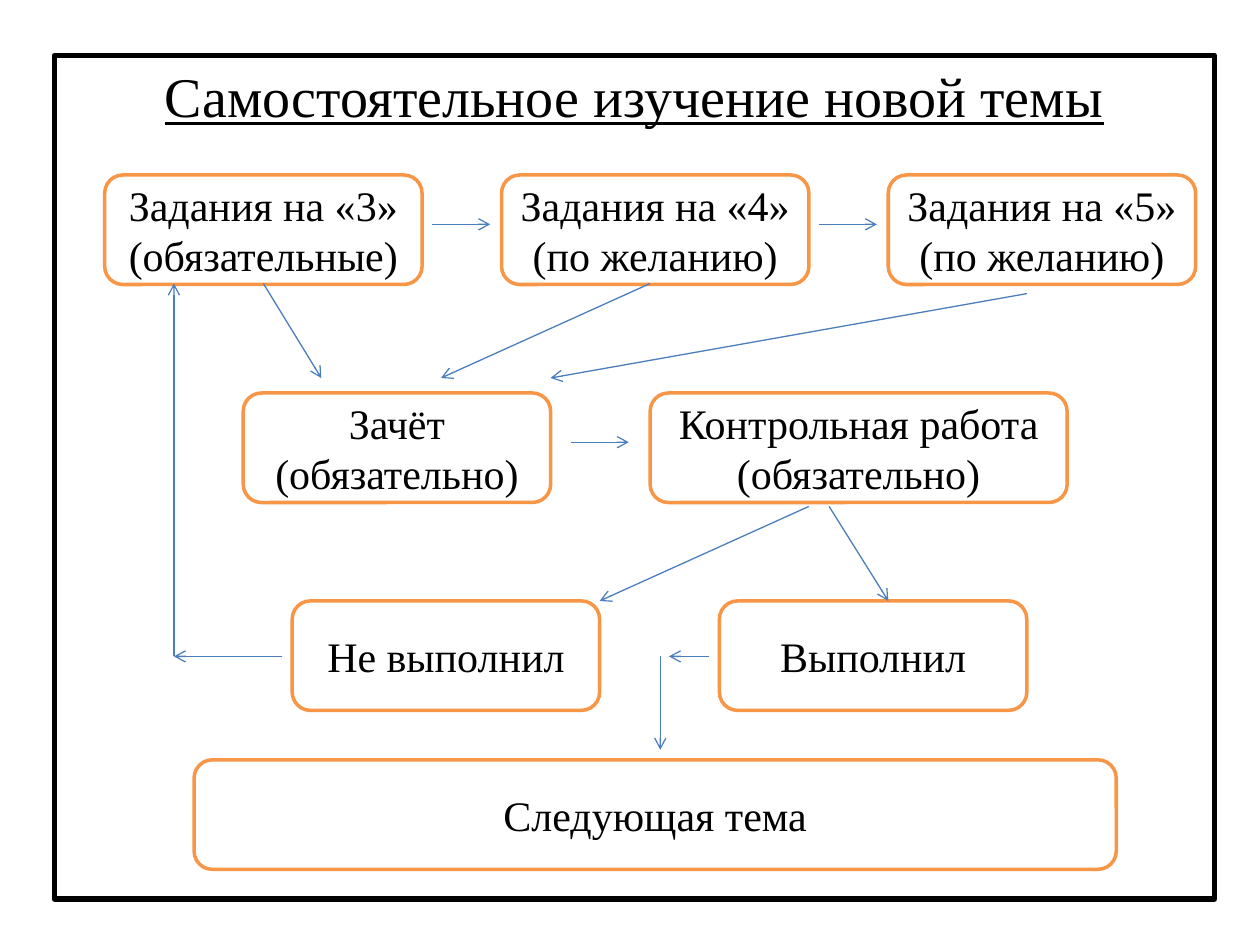
from lxml.etree import SubElement
from pptx import Presentation
from pptx.dml.color import RGBColor
from pptx.enum.shapes import MSO_CONNECTOR as Conn, MSO_SHAPE as Shape
from pptx.enum.text import MSO_ANCHOR as Anchor, PP_ALIGN as Align
from pptx.oxml.ns import qn
from pptx.util import Pt


def rgb(value):
    return RGBColor.from_string(value)


class FlowSlide:
    font = "Times New Roman"
    ink, paper, accent, arrow_color = "000000", "FFFFFF", "F79646", "4B7EBC"
    box_height = 62.6

    def __init__(self, prs):
        self.s = prs.slides.add_slide(prs.slide_layouts[0])
        title = self.s.shapes.title
        title._element.getparent().remove(title._element)

    def outline(self, sp, color, width):
        sp.line.color.rgb = rgb(color)
        sp.line.width = Pt(width)

    def add_text(self, p, text, size, underline=None):
        p.alignment = Align.CENTER
        r = p.add_run()
        r.text = text
        r.font.name = self.font
        r.font.size = Pt(size)
        r.font.underline = underline
        r.font.color.rgb = rgb(self.ink)

    def heading(self, text, x, y, w, h):
        sp = self.s.placeholders[1]
        sp.left, sp.top, sp.width, sp.height = Pt(x), Pt(y), Pt(w), Pt(h)
        self.outline(sp, self.ink, 3)
        self.add_text(sp.text_frame.paragraphs[0], text, 32, True)

    def box(self, x, y, w, *lines):
        sp = self.s.shapes.add_shape(
            Shape.ROUNDED_RECTANGLE, Pt(x), Pt(y), Pt(w), Pt(self.box_height))
        sp.shadow.inherit = False
        sp.fill.solid()
        sp.fill.fore_color.rgb = rgb(self.paper)
        self.outline(sp, self.accent, 2)
        tf = sp.text_frame
        tf.word_wrap = True
        tf.vertical_anchor = Anchor.MIDDLE
        for i, line in enumerate(lines):
            p = tf.add_paragraph() if i else tf.paragraphs[0]
            self.add_text(p, line, 24)

    def arrow(self, x1, y1, x2, y2):
        sp = self.s.shapes.add_connector(
            Conn.STRAIGHT, Pt(x1), Pt(y1), Pt(x2), Pt(y2))
        self.outline(sp, self.arrow_color, 0.75)
        props = sp._element.spPr
        SubElement(props.find(qn("a:ln")), qn("a:tailEnd"), type="arrow")
        SubElement(props, qn("a:effectLst"))


def main():
    prs = Presentation()
    prs.slide_width, prs.slide_height = Pt(720), Pt(540)
    flow = FlowSlide(prs)
    flow.heading("Самостоятельное изучение новой темы", 31, 31.7, 663, 482)

    tasks, tests, results, final = 100, 224.6, 343.4, 434.2
    width = 175.7
    flow.box(59.8, tasks, 181.4, "Задания на «3» (обязательные)")
    flow.box(286.6, tasks, width, "Задания на «4» (по желанию)")
    flow.box(507.6, tasks, width, "Задания на «5» (по желанию)")
    flow.box(371.5, tests, 238.3, "Контрольная работа", "(обязательно)")
    flow.box(139, tests, width, "Зачёт", "(обязательно)")
    flow.box(167, results, width, "Не выполнил")
    flow.box(411.1, results, width, "Выполнил")
    flow.box(110.9, final, 527, "Следующая тема")

    task_mid, test_mid, result_mid = 128.2, 252.7, 375.1
    task_bottom, test_bottom, test_entry = 162, 289.4, 216
    back_x, next_x = 99.4, 377.3
    arrows = [
        (247, task_mid, 280.1, task_mid),
        (468, task_mid, 501.1, task_mid),
        (150.5, task_bottom, 183.6, test_entry),
        (371.5, task_bottom, 252, test_entry),
        (586.8, 167.8, 314.6, test_entry),
        (326.2, test_mid, 359.3, test_mid),
        (462.2, test_bottom, 342.7, results),
        (473.8, test_bottom, 507.6, results),
        (161.3, result_mid, back_x, result_mid),
        (back_x, result_mid, back_x, task_bottom),
        (405.4, result_mid, 382.3, result_mid),
        (next_x, result_mid, next_x, 428.4),
    ]
    for ends in arrows:
        flow.arrow(*ends)
    prs.save("out.pptx")


if __name__ == "__main__":
    main()
